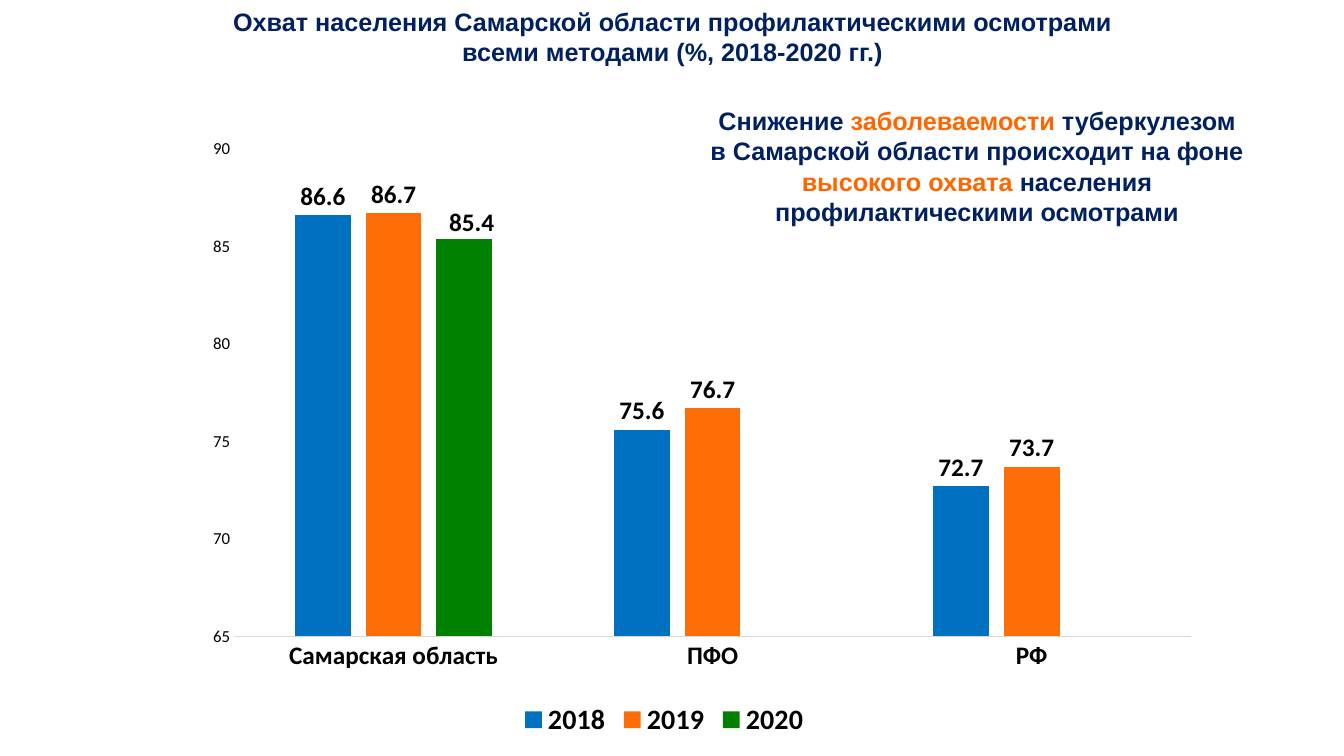
import lxml.etree
import pptx
import pptx.chart.data
import pptx.dml.color
import pptx.enum.chart
import pptx.enum.text
import pptx.oxml
import pptx.oxml.ns
import pptx.util

Inches = pptx.util.Inches
qn = pptx.oxml.ns.qn
rgb = pptx.dml.color.RGBColor.from_string
NAVY, ORANGE, BLACK = "002060", "FF6600", "000000"


def write(p, text, **fmt):
    r = p.add_run()
    r.text = text
    style(r.font, **fmt)


def style(font, size=18, color=NAVY, bold=True, name="Arial"):
    font.size = pptx.util.Pt(size)
    font.color.rgb = rgb(color)
    font.bold = bold
    font.name = name


prs = pptx.Presentation()
prs.slide_width, prs.slide_height = Inches(13.33), Inches(7.5)
s = prs.slides.add_slide(prs.slide_layouts[5])

title = s.shapes.title
title.left, title.top, title.width, title.height = Inches(1.67), 0, Inches(10), Inches(1.02)
tf = title.text_frame
tf.word_wrap = True
tf.auto_size = pptx.enum.text.MSO_AUTO_SIZE.NONE
tf.vertical_anchor = pptx.enum.text.MSO_ANCHOR.TOP
tf.margin_top = Inches(0.06)
lines = [
    "Охват населения Самарской области профилактическими осмотрами",
    "всеми методами (%, 2018-2020 гг.)",
]
for i, line in enumerate(lines):
    p = tf.add_paragraph() if i else tf.paragraphs[0]
    p.alignment = pptx.enum.text.PP_ALIGN.CENTER
    p.space_before = pptx.util.Pt(0)
    write(p, line)

data = pptx.chart.data.CategoryChartData(number_format="General")
data.categories = ["Самарская область", "ПФО", "РФ"]
series = [
    ("2018", (86.6, 75.6, 72.7), "0070C0"),
    ("2019", (86.7, 76.7, 73.7), "FF6D09"),
    ("2020", (85.4, None, None), "008000"),
]
for name, values, color in series:
    data.add_series(name, values)
chart = s.shapes.add_chart(
    pptx.enum.chart.XL_CHART_TYPE.COLUMN_CLUSTERED,
    Inches(1.36), Inches(1.31), Inches(10.46), Inches(6.06), data,
).chart
chart.has_title = False
style(chart.font, size=10, color=BLACK, bold=False, name="Calibri")
chart.has_legend = True
chart.legend.position = pptx.enum.chart.XL_LEGEND_POSITION.BOTTOM
chart.legend.include_in_layout = False
style(chart.legend.font, size=20, color=BLACK, name="Calibri")

cat, val = chart.category_axis, chart.value_axis
for axis in (cat, val):
    axis.has_major_gridlines = False
    axis.major_tick_mark = axis.minor_tick_mark = pptx.enum.chart.XL_TICK_MARK.NONE
style(cat.tick_labels.font, color=BLACK, name="Calibri")
style(val.tick_labels.font, size=12, color=BLACK, bold=False, name="Calibri")
cat.format.line.color.rgb = rgb("D9D9D9")
cat.format.line.width = pptx.util.Pt(0.75)
val.format.line.fill.background()
val.minimum_scale, val.maximum_scale, val.major_unit = 65, 90, 5

plot = chart.plots[0]
plot.gap_width, plot.overlap = 219, -27
plot.vary_by_categories = False
outside = pptx.enum.chart.XL_LABEL_POSITION.OUTSIDE_END
for ser, (name, values, color) in zip(plot.series, series):
    ser.format.fill.solid()
    ser.format.fill.fore_color.rgb = rgb(color)
    ser.data_labels.show_value = True
    ser.data_labels.position = outside
    style(ser.data_labels.font, color=BLACK, name="Calibri")

label = plot.series[2].points[0].data_label
style(label.font, color=BLACK, name="Calibri")
label.position = outside

space = chart.element if hasattr(chart, "element") else chart._chartSpace
area = space.find(".//" + qn("c:plotArea"))
for old in area.findall(qn("c:layout")):
    area.remove(old)
layouts = [
    (area, 0, [("layoutTarget", "inner"), ("xMode", "edge"), ("yMode", "edge"),
               ("x", 0.092), ("y", 0.028), ("w", 0.908), ("h", 0.798)]),
    (space.find(".//" + qn("c:dLbl")), 1, [("x", 0.007), ("y", 0.005)]),
]
for parent, index, settings in layouts:
    layout = lxml.etree.Element(qn("c:layout"))
    manual = lxml.etree.SubElement(layout, qn("c:manualLayout"))
    for tag, value in settings:
        lxml.etree.SubElement(manual, qn("c:" + tag)).set("val", str(value))
    parent.insert(index, layout)

tf = s.shapes.add_textbox(Inches(6.92), Inches(0.87), Inches(5.54), Inches(1.55)).text_frame
tf.word_wrap = True
tf.vertical_anchor = pptx.enum.text.MSO_ANCHOR.MIDDLE
p = tf.paragraphs[0]
p.alignment = pptx.enum.text.PP_ALIGN.CENTER
for text, color in [
    ("Снижение ", NAVY),
    ("заболеваемости", ORANGE),
    (" туберкулезом в Самарской области происходит на фоне ", NAVY),
    ("высокого охвата", ORANGE),
    (" населения профилактическими осмотрами", NAVY),
]:
    write(p, text, color=color)

prs.save("out.pptx")
